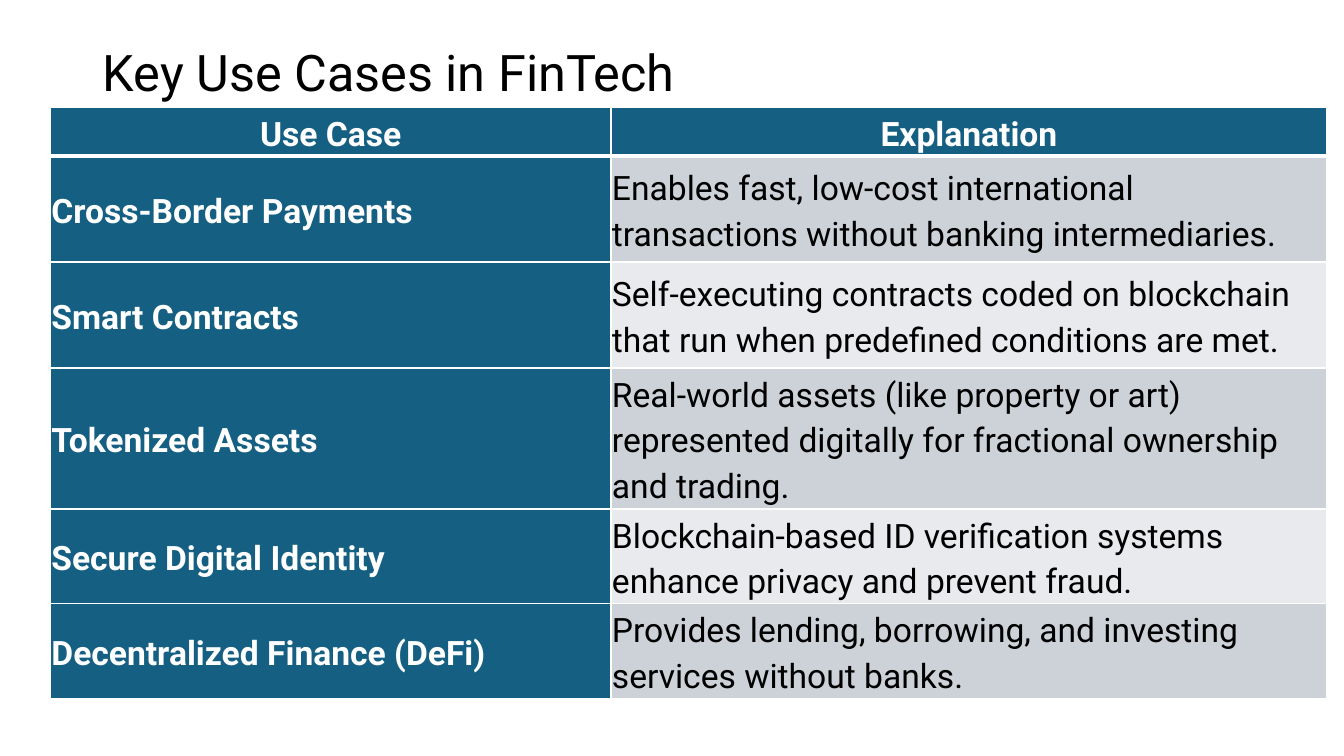
from lxml import etree
from pptx import Presentation
from pptx.dml.color import RGBColor
from pptx.enum.text import MSO_ANCHOR, PP_ALIGN
from pptx.oxml.ns import qn
from pptx.util import Inches, Pt

MIDDLE = MSO_ANCHOR.MIDDLE
CENTER, LEFT = PP_ALIGN.CENTER, PP_ALIGN.LEFT

TITLE = "Key Use Cases in FinTech"
ROWS = [
    ("Use Case", "Explanation"),
    ("Cross-Border Payments",
     "Enables fast, low-cost international transactions without banking intermediaries."),
    ("Smart Contracts",
     "Self-executing contracts coded on blockchain that run when predefined conditions are met."),
    ("Tokenized Assets",
     "Real-world assets (like property or art) represented digitally for fractional ownership and trading."),
    ("Secure Digital Identity",
     "Blockchain-based ID verification systems enhance privacy and prevent fraud."),
    ("Decentralized Finance (DeFi)",
     "Provides lending, borrowing, and investing services without banks."),
]
COLORS = {"head": "156082", "odd": "CCD2D8", "even": "E8EAED",
          "white": "FFFFFF", "black": "000000"}
FONT = "Roboto"
COL_WIDTHS = (5.56, 7.1)
ROW_HEIGHTS = (0.35, 1.05, 1.05, 1.05, 0.7, 0.7)
TABLE_LEFT, TABLE_TOP, TABLE_HEIGHT = 0.5, 1.07, 5.78
CELL_MARGIN = Inches(0.01)


def color(name):
    return RGBColor.from_string(COLORS[name])


def add_text(p, text, size, color_name, bold=False):
    r = p.add_run()
    r.text = text
    r.font.name, r.font.size, r.font.bold = FONT, Pt(size), bold
    r.font.color.rgb = color(color_name)


def set_borders(cell, top, bottom):
    """Draw white cell borders; top and bottom widths are in points."""
    tc_pr = cell._tc.get_or_add_tcPr()
    for tag, width in (("a:lnL", 1), ("a:lnR", 1), ("a:lnT", top), ("a:lnB", bottom)):
        ln = etree.SubElement(tc_pr, qn(tag), w=str(Pt(width)))
        fill = etree.SubElement(ln, qn("a:solidFill"))
        etree.SubElement(fill, qn("a:srgbClr"), val=COLORS["white"])


def fill_cell(cell, text, row, col):
    is_head = row == 0 or col == 0
    set_borders(cell, top=3 if row == 1 else 1, bottom=3 if row == 0 else 1)
    cell.fill.solid()
    cell.fill.fore_color.rgb = color("head" if is_head else "odd" if row % 2 else "even")
    cell.vertical_anchor = MIDDLE
    cell.margin_left = cell.margin_right = CELL_MARGIN
    cell.margin_top = cell.margin_bottom = CELL_MARGIN
    p = cell.text_frame.paragraphs[0]
    p.alignment = CENTER if row == 0 else LEFT
    p.line_spacing, p.space_after = 1.15, Pt(8)
    add_text(p, text, 24, "white" if is_head else "black", is_head)


def add_title(s):
    tf = s.shapes.add_textbox(Inches(0.92), Inches(0.4), Inches(11.5), Inches(0.7)).text_frame
    tf.word_wrap = True
    tf.vertical_anchor = MIDDLE
    p = tf.paragraphs[0]
    p.line_spacing = 0.9
    add_text(p, TITLE, 36, "black")


def add_use_cases(s):
    frame = s.shapes.add_table(len(ROWS), len(COL_WIDTHS), Inches(TABLE_LEFT),
                               Inches(TABLE_TOP), Inches(sum(COL_WIDTHS)), Inches(TABLE_HEIGHT))
    table = frame.table
    for column, width in zip(table.columns, COL_WIDTHS):
        column.width = Inches(width)
    for i, (height, texts) in enumerate(zip(ROW_HEIGHTS, ROWS)):
        table.rows[i].height = Inches(height)
        for j, text in enumerate(texts):
            fill_cell(table.cell(i, j), text, i, j)
    frame.height = Inches(TABLE_HEIGHT)


def main():
    prs = Presentation()
    prs.slide_width, prs.slide_height = Inches(13.33), Inches(7.5)
    s = prs.slides.add_slide(prs.slide_layouts[6])
    add_title(s)
    add_use_cases(s)
    prs.save("out.pptx")


if __name__ == "__main__":
    main()
